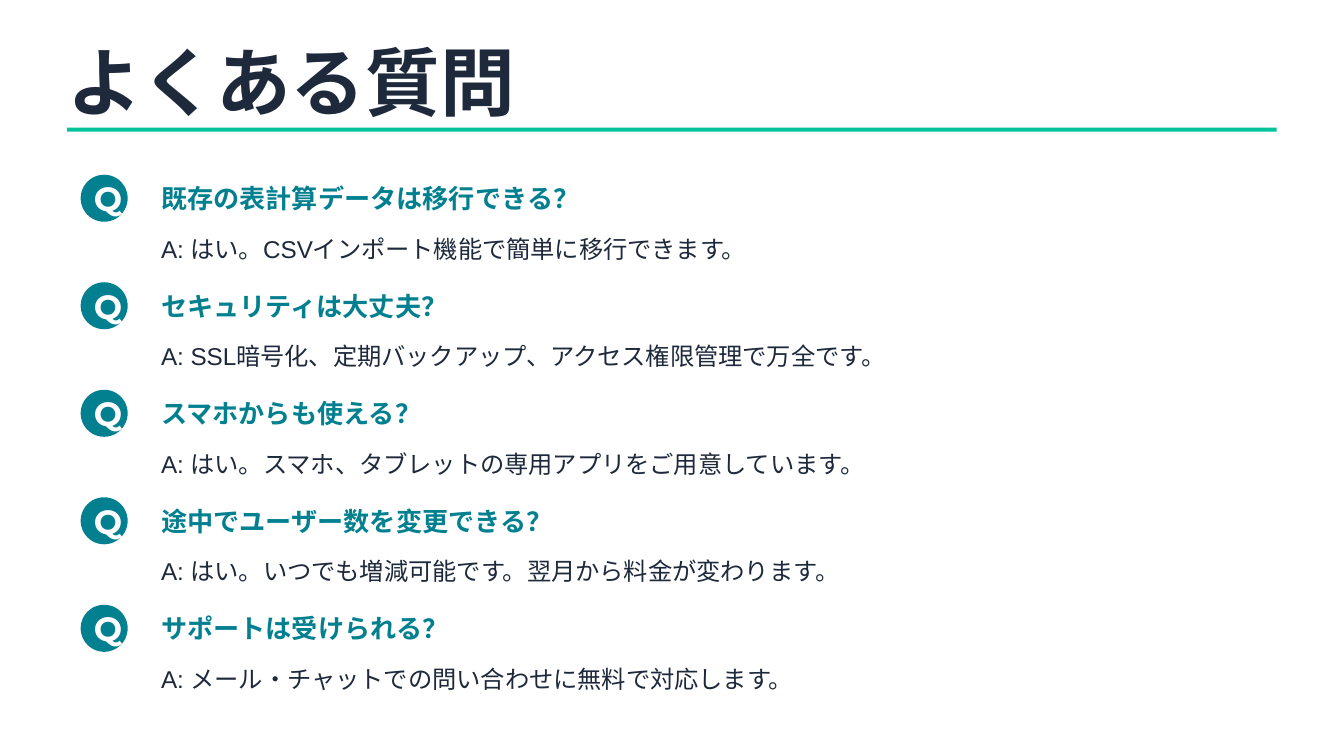
from pptx import Presentation
from pptx.dml.color import RGBColor as RGB
from pptx.enum.shapes import MSO_SHAPE as Shape
from pptx.enum.text import MSO_ANCHOR as Anchor, PP_ALIGN as Align
from pptx.util import Inches, Pt

COLORS = {"ink": "1E293B", "teal": "028090", "mint": "02C39A", "white": "FFFFFF"}

STYLES = {
    "title": ({"name": "Montserrat", "size": Pt(40), "bold": True}, "ink"),
    "badge": ({"name": "Montserrat", "size": Pt(18), "bold": True}, "white"),
    "ask": ({"name": "Arial", "size": Pt(14), "bold": True}, "teal"),
    "reply": ({"name": "Arial", "size": Pt(13), "bold": False}, "ink"),
}

ITEMS = [
    ("既存の表計算データは移行できる？", "はい。CSVインポート機能で簡単に移行できます。"),
    ("セキュリティは大丈夫？", "SSL暗号化、定期バックアップ、アクセス権限管理で万全です。"),
    ("スマホからも使える？", "はい。スマホ、タブレットの専用アプリをご用意しています。"),
    ("途中でユーザー数を変更できる？", "はい。いつでも増減可能です。翌月から料金が変わります。"),
    ("サポートは受けられる？", "メール・チャットでの問い合わせに無料で対応します。"),
]

TOP, STEP = 1.3, 0.8


def add_text(slide, text, box, style, align=Align.LEFT):
    """Add a wrapped, vertically centred text box and return its frame."""
    frame = slide.shapes.add_textbox(*map(Inches, box)).text_frame
    frame.word_wrap = True
    frame.vertical_anchor = Anchor.MIDDLE
    para = frame.paragraphs[0]
    para.alignment = align
    run = para.add_run()
    run.text = text
    values, color = STYLES[style]
    for name, value in values.items():
        setattr(run.font, name, value)
    run.font.color.rgb = RGB.from_string(COLORS[color])
    return frame


def add_solid(slide, kind, box, color):
    """Add a filled shape without outline or shadow."""
    shape = slide.shapes.add_shape(kind, *map(Inches, box))
    shape.shadow.inherit = False
    shape.fill.solid()
    shape.fill.fore_color.rgb = RGB.from_string(COLORS[color])
    shape.line.fill.background()


def add_title(slide, text):
    """Add the heading and the rule below it."""
    frame = add_text(slide, text, (0.5, 0.3, 9, 0.6), "title")
    for side in ("left", "top", "right", "bottom"):
        setattr(frame, f"margin_{side}", 0)
    add_solid(slide, Shape.RECTANGLE, (0.5, 0.95, 9, 0.03), "mint")


def add_item(slide, top, ask, reply):
    """Add one question with its round badge and its answer."""
    badge = (0.6, top, 0.35, 0.35)
    add_solid(slide, Shape.OVAL, badge, "teal")
    add_text(slide, "Q", badge, "badge", Align.CENTER)
    add_text(slide, ask, (1.1, top, 8.4, 0.35), "ask")
    add_text(slide, f"A: {reply}", (1.1, top + 0.4, 8.4, 0.3), "reply")


def main():
    """Build the FAQ slide and save it."""
    deck = Presentation()
    deck.slide_width = Inches(10)
    deck.slide_height = Inches(10 * 9 / 16)
    slide = deck.slides.add_slide(deck.slide_layouts[6])
    add_title(slide, "よくある質問")
    for row, (ask, reply) in enumerate(ITEMS):
        add_item(slide, TOP + row * STEP, ask, reply)
    deck.save("out.pptx")


if __name__ == "__main__":
    main()
